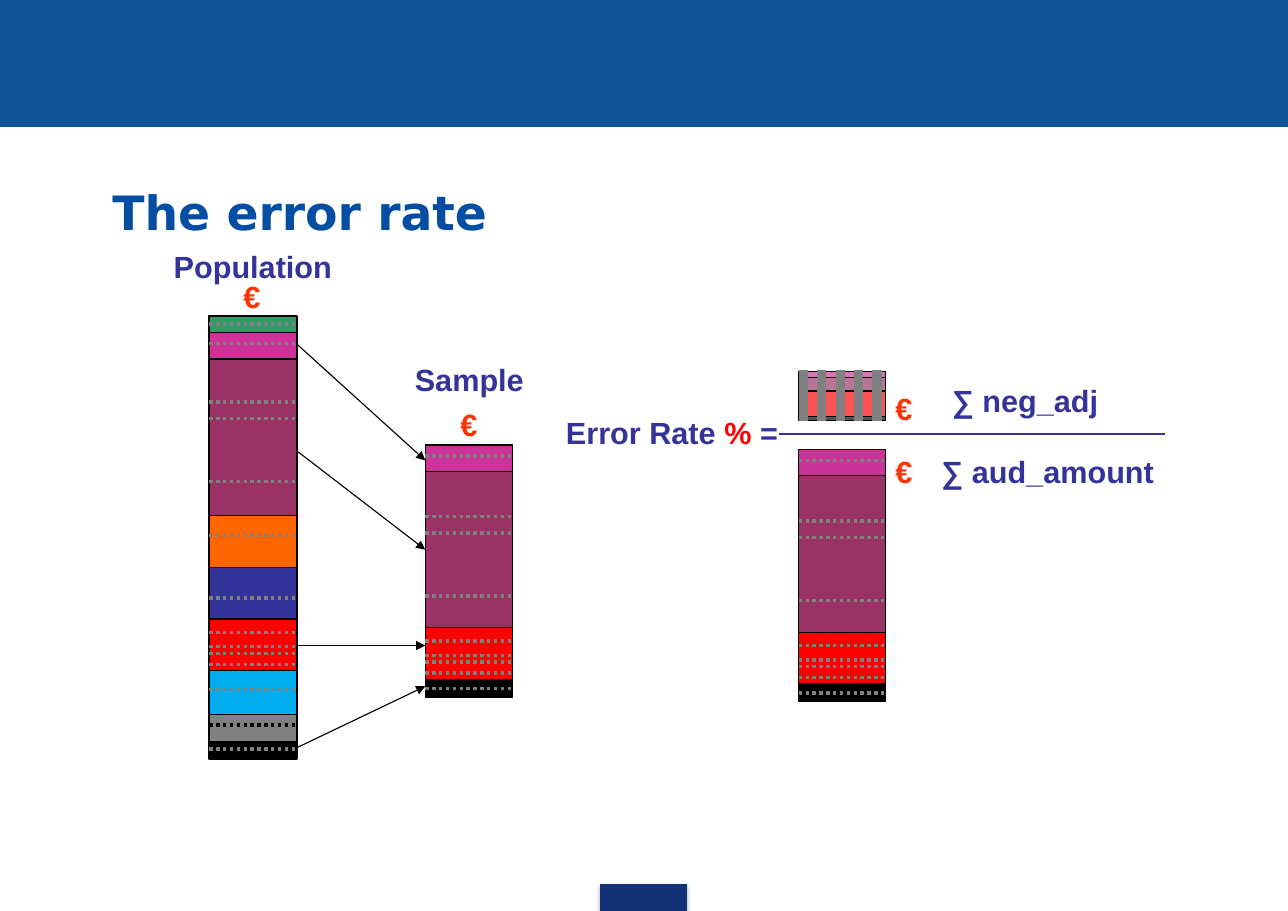
import lxml.etree
import pptx
import pptx.dml.color
import pptx.enum.dml
import pptx.enum.shapes
import pptx.enum.text
import pptx.oxml
import pptx.oxml.ns
import pptx.util

PX = 9144
BLACK, GREY, INDIGO, RED, EURO = "000000", "808080", "333399", "FF0000", "FF3300"
PINK, PLUM = "CC3399", "993366"
COLUMN_WIDTH = 79

POPULATION_LAYERS = [
    ("339966", 15), (PINK, 24), (PLUM, 142), ("FF6600", 47), (INDIGO, 47),
    (RED, 47), ("00AEEF", 40), (GREY, 24), (BLACK, 16),
]
POPULATION_ITEMS = [7, 25, 78, 93, 150, 199, 256, 287, 300, 306, 316, 339, 393]
SAMPLE_LAYERS = [(PINK, 24), (PLUM, 142), (RED, 47), (BLACK, 16)]
SAMPLE_ITEMS = [10, 65, 80, 137, 178, 191, 197, 207, 221]
ERROR_LAYERS = [(PINK, 6), (PLUM, 12), (RED, 23), (BLACK, 4)]
ERROR_ITEMS = [3, 11, 18, 26, 33, 41]
SELECTIONS = [(25, 14), (122, 95), (299, 182), (392, 219)]


def scale(*lengths):
    """Turn px lengths into EMU."""
    return [pptx.util.Emu(length * PX) for length in lengths]


def colour(value):
    """Turn a hex string into a colour."""
    return pptx.dml.color.RGBColor.from_string(value)


def apply_format(target, values):
    """Set each named attribute of the target."""
    for name, value in values.items():
        setattr(target, name, value)


def add_effects(shape, content=""):
    """Give the shape an explicit effect list."""
    namespace = pptx.oxml.ns.nsdecls("a")
    effects = pptx.oxml.parse_xml(f"<a:effectLst {namespace}>{content}</a:effectLst>")
    shape._element.spPr.append(effects)


def add_block(page, box, fill, line=BLACK, weight=0.75, opacity=100):
    """Draw a filled rectangle."""
    block = page.shapes.add_shape(pptx.enum.shapes.MSO_SHAPE.RECTANGLE, *scale(*box))
    block.shadow.inherit = False
    block.fill.solid()
    block.fill.fore_color.rgb = colour(fill)
    block.line.color.rgb = colour(line)
    block.line.width = pptx.util.Pt(weight)
    if opacity < 100:
        tint = block._element.spPr.find(".//" + pptx.oxml.ns.qn("a:srgbClr"))
        alpha = lxml.etree.SubElement(tint, pptx.oxml.ns.qn("a:alpha"))
        alpha.set("val", str(opacity * 1000))
    return block


def add_line(page, start, end, tint=BLACK, weight=0.75, dotted=False, arrow=False):
    """Draw a straight line, dotted or with an arrowhead if asked."""
    straight = pptx.enum.shapes.MSO_CONNECTOR.STRAIGHT
    line = page.shapes.add_connector(straight, *scale(*start, *end))
    line.line.color.rgb = colour(tint)
    line.line.width = pptx.util.Pt(weight)
    if dotted:
        line.line.dash_style = pptx.enum.dml.MSO_LINE.ROUND_DOT
    if arrow:
        outline = line.line._get_or_add_ln()
        head = lxml.etree.SubElement(outline, pptx.oxml.ns.qn("a:tailEnd"))
        head.set("type", "triangle")
    add_effects(line)


def fill_paragraph(para, spans, size, face):
    """Write bold coloured spans into a paragraph."""
    for text, tint in spans:
        span = para.add_run()
        span.text = text
        apply_format(span.font, {"size": pptx.util.Pt(size), "name": face, "bold": True})
        span.font.color.rgb = colour(tint)


def add_label(page, box, *spans):
    """Write a centred one-line label."""
    frame = page.shapes.add_textbox(*scale(*box)).text_frame
    apply_format(frame, {
        "margin_left": 0, "margin_right": 0, "margin_top": 0, "margin_bottom": 0,
        "word_wrap": False, "vertical_anchor": pptx.enum.text.MSO_ANCHOR.MIDDLE,
    })
    para = frame.paragraphs[0]
    para.alignment = pptx.enum.text.PP_ALIGN.CENTER
    fill_paragraph(para, spans, 20, "Arial")


def add_euro(page, left, top):
    """Write a euro sign."""
    add_label(page, (left, top, 39, 28), ("€", EURO))


def add_column(page, left, top, layers, items, weight=2.25, opacity=100):
    """Stack coloured layers and cross them with dotted item lines."""
    layer_top = top
    for fill, height in layers:
        add_block(page, (left, layer_top, COLUMN_WIDTH, height), fill, opacity=opacity)
        layer_top += height
    for item in items:
        add_item(page, left, top + item, GREY, weight)


def add_item(page, left, level, tint, weight=2.25):
    """Draw one dotted line across a column."""
    add_line(page, (left, level), (left + COLUMN_WIDTH, level), tint, weight, dotted=True)


def add_frame(page, width):
    """Draw the top band and the bottom tab."""
    add_block(page, (0, 0, width, 115), "0F5494", "0F5494")
    tab = add_block(page, (545, 803, 78, 24), "133176", "133176")
    tab._element.spPr.remove(tab._element.spPr.find(pptx.oxml.ns.qn("a:effectLst")))
    add_effects(tab, '<a:outerShdw blurRad="39370" dist="22860" dir="5400000" rotWithShape="0">'
                     '<a:srgbClr val="000000"><a:alpha val="35000"/></a:srgbClr></a:outerShdw>')


def add_title(page, box):
    """Move and fill the title placeholder."""
    title = page.shapes.title
    apply_format(title, dict(zip(("left", "top", "width", "height"), scale(*box))))
    title.text_frame.vertical_anchor = pptx.enum.text.MSO_ANCHOR.MIDDLE
    para = title.text_frame.paragraphs[0]
    para.alignment = pptx.enum.text.PP_ALIGN.LEFT
    fill_paragraph(para, [("The error rate", "034EA2")], 30.9, "DejaVu Sans")


def add_population(page, left, top):
    """Draw the population column with its heading."""
    add_label(page, (left - 55, top - 59, 189, 28), ("Population", INDIGO))
    add_euro(page, left + 19, top - 32)
    height = sum(layer[1] for layer in POPULATION_LAYERS)
    add_block(page, (left, top, COLUMN_WIDTH, height), BLACK, weight=1.5)
    add_column(page, left, top, POPULATION_LAYERS, POPULATION_ITEMS)
    add_item(page, left, top + 371, BLACK)


def add_sample(page, left, top):
    """Draw the sample column with its heading."""
    add_label(page, (left - 21, top - 74, 122, 28), ("Sample", INDIGO))
    add_euro(page, left + 20, top - 33)
    add_column(page, left, top, SAMPLE_LAYERS, SAMPLE_ITEMS)


def add_selections(page, population, sample):
    """Draw arrows from population layers to sample layers."""
    for source, target in SELECTIONS:
        start = (population[0] + COLUMN_WIDTH, population[1] + source)
        add_line(page, start, (sample[0], sample[1] + target), arrow=True)


def add_formula(page, left, level):
    """Draw the error rate fraction around its bar."""
    add_label(page, (left, level - 16, 194, 28),
              ("Error Rate ", INDIGO), ("%", RED), (" =", INDIGO))
    add_line(page, (left + 194, level), (left + 544, level), INDIGO, 1.5)
    add_column(page, left + 212, level - 57, ERROR_LAYERS, ERROR_ITEMS, 6, 68)
    add_column(page, left + 212, level + 14, SAMPLE_LAYERS, SAMPLE_ITEMS)
    for offset, width, text in ((-45, 173, "∑ neg_adj"), (20, 214, "∑ aud_amount")):
        add_label(page, (left + 331, level + offset, width, 28), (text, INDIGO))
    for offset in (-37, 20):
        add_euro(page, left + 288, level + offset)


def main():
    """Build and save the deck."""
    deck = pptx.Presentation()
    deck.slide_width, deck.slide_height = scale(1169, 827)
    page = deck.slides.add_slide(deck.slide_layouts[5])
    population, sample = (190, 287), (386, 404)
    add_frame(page, 1169)
    add_title(page, (92, 161, 981, 62))
    add_population(page, *population)
    add_selections(page, population, sample)
    add_sample(page, *sample)
    add_formula(page, 513, 394)
    deck.save("out.pptx")


if __name__ == "__main__":
    main()
